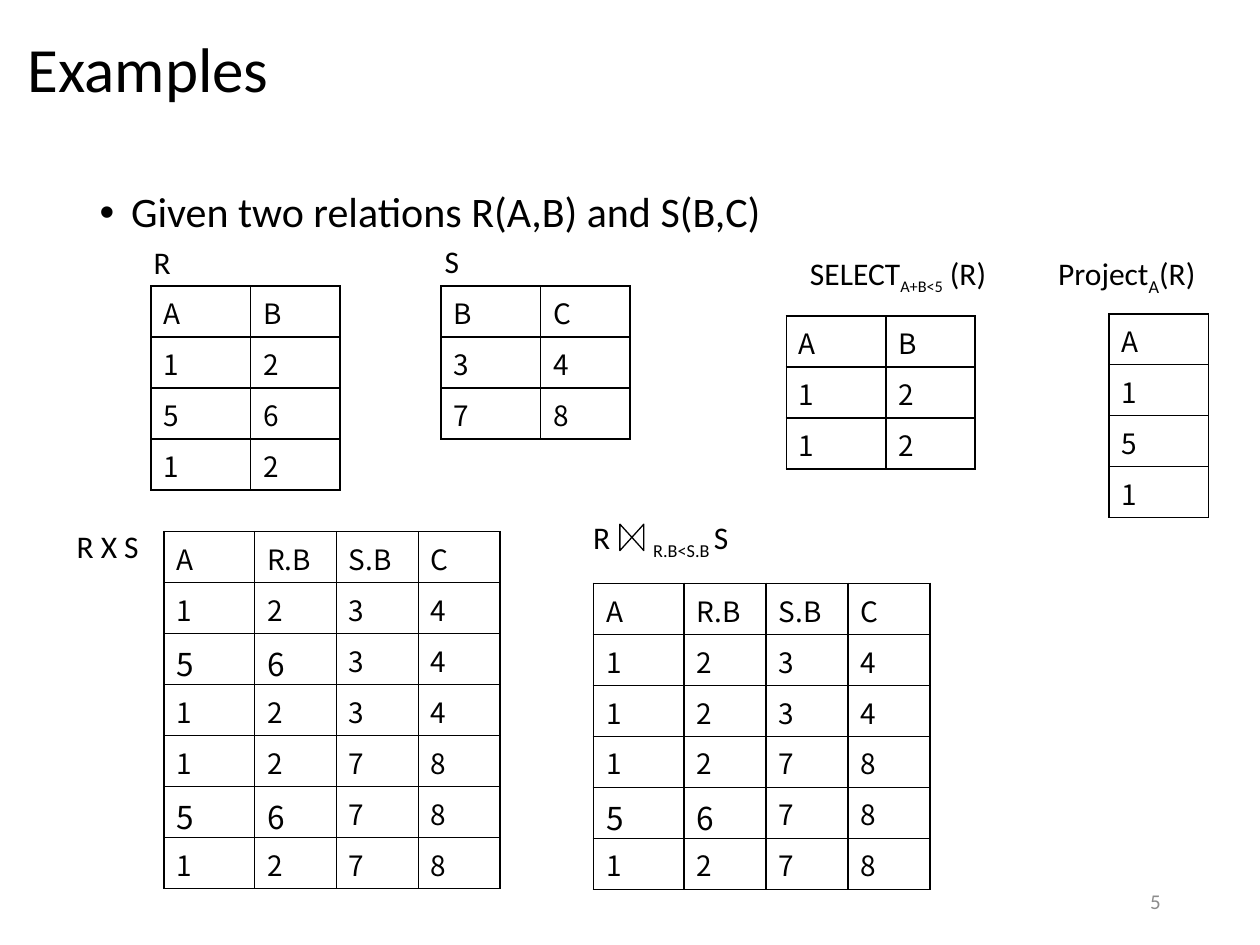
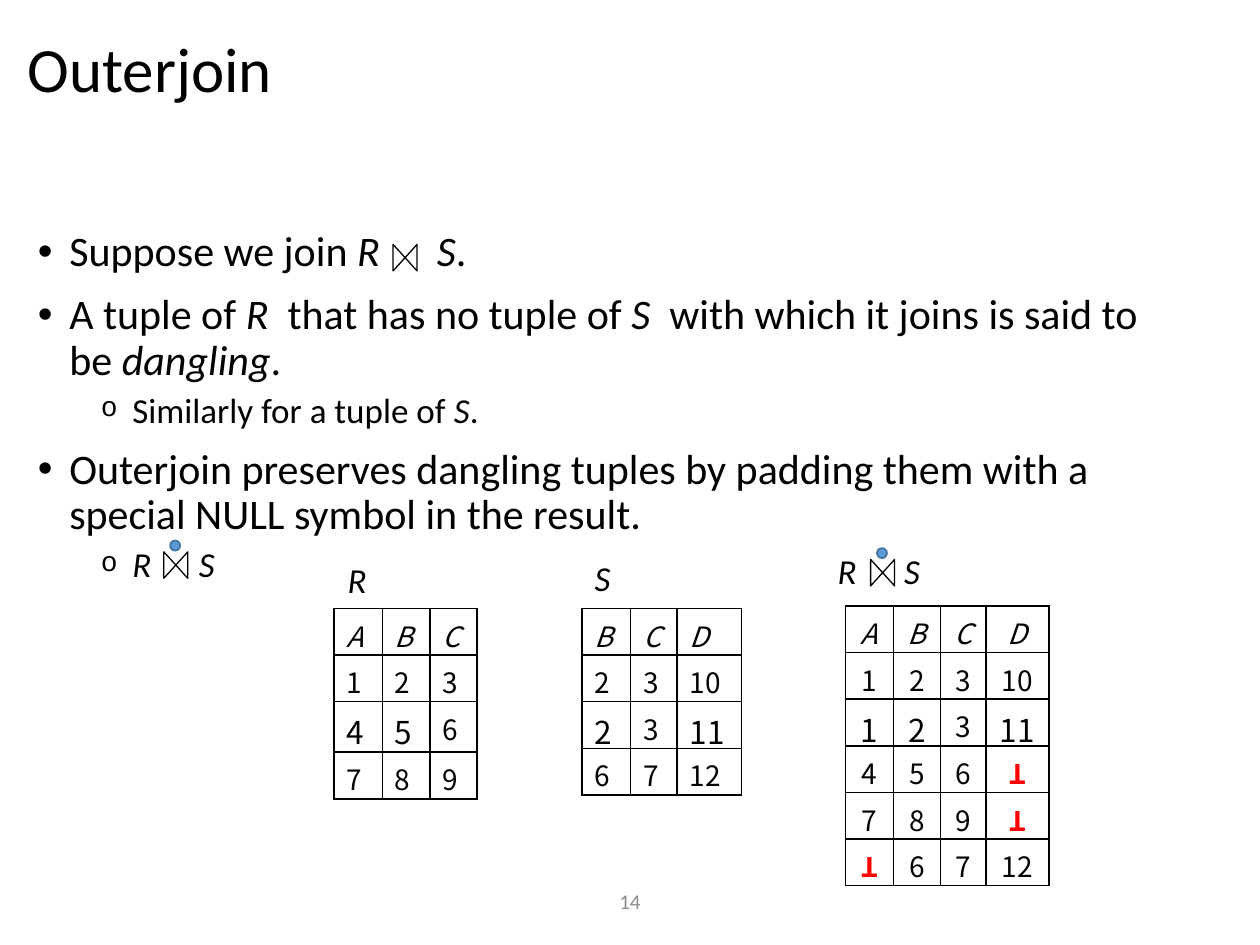
from dataclasses import dataclass

from lxml.etree import SubElement
from pptx import Presentation
from pptx.dml.color import RGBColor
from pptx.enum.shapes import MSO_SHAPE
from pptx.enum.text import MSO_ANCHOR, MSO_AUTO_SIZE, PP_ALIGN
from pptx.oxml.ns import qn
from pptx.util import Emu, Inches, Pt

COLORS = {
    "text": "000000",
    "page_number": "8C8C8C",
    "null": "FF0000",
    "dot": "5B9BD5",
    "dot_edge": "43739E",
}
TEXT_FONT = "Calibri"
TABLE_FONT = "Noto Sans CJK KR"
NULL = "Ʇ"
SPACE_WIDTH = 0.226
GRID_COLUMNS, GRID_ROWS = 100, 75
SLIDE_WIDTH, SLIDE_HEIGHT = Inches(10), Inches(7.5)
BULLETS = [
    {"char": "•", "font": "Arial", "percent": 100, "indent": 0.25, "before": 10, "size": 24},
    {"char": "o", "font": "Courier New", "percent": 80, "indent": 0.75, "before": 5, "size": 20},
]
HANGING = 0.25
ITALIC = {"italic": True}
SUBSCRIPT = {"baseline": -25}
JOIN_GAP = (" ", {"stretch": 5})
WIDE_SPACE = (" ", {"stretch": 1})


@dataclass
class Box:
    """Area measured in columns and rows of the slide grid."""

    left: float
    top: float
    width: float
    height: float

    def emu(self):
        """Return left, top, width and height as slide lengths."""
        column, row = SLIDE_WIDTH / GRID_COLUMNS, SLIDE_HEIGHT / GRID_ROWS
        return [Emu(round(cells * unit)) for cells, unit in
                zip((self.left, self.top, self.width, self.height), (column, row) * 2)]

    def inside(self, across, down, width, height):
        """Return a box placed relative to this one."""
        return Box(self.left + across, self.top + down, width, height)


TITLE_BOX = Box(1.2, 0.8, 97.6, 9.9)


def rgb(name):
    """Look up a colour of the deck."""
    return RGBColor.from_string(COLORS[name])


def write(paragraph, runs, align=PP_ALIGN.LEFT, **shared):
    """Fill a paragraph with strings or (string, format) pairs."""
    paragraph.alignment = align
    for part in [runs] if isinstance(runs, str) else runs:
        words, own = (part, {}) if isinstance(part, str) else part
        look = {"size": 18, "font": TEXT_FONT, "color": "text", **shared, **own}
        run = paragraph.add_run()
        run.text = words
        run.font.size = Pt(look["size"])
        run.font.name = look["font"]
        run.font.color.rgb = rgb(look["color"])
        run.font.bold = look.get("bold", False)
        run.font.italic = look.get("italic", False)
        properties = run.font._element
        if "baseline" in look:
            properties.set("baseline", str(look["baseline"] * 1000))
        if "stretch" in look:
            properties.set("spc", str(round(look["stretch"] * SPACE_WIDTH * look["size"] * 100)))


def place(shape, box):
    """Move a shape to a grid box."""
    shape.left, shape.top, shape.width, shape.height = box.emu()


def add_label(slide, box, runs, anchor=MSO_ANCHOR.TOP, **look):
    """Add a wrapped line of text."""
    frame = slide.shapes.add_textbox(*box.emu()).text_frame
    frame.word_wrap = True
    frame.vertical_anchor = anchor
    write(frame.paragraphs[0], runs, **look)


def add_page_number(slide, box, number, align):
    """Add the grey page number of the footer."""
    add_label(slide, box, number, MSO_ANCHOR.MIDDLE, align=align, size=12, color="page_number")


def set_bullet(paragraph, level):
    """Give a list paragraph its level, spacing, indent and bullet."""
    style = BULLETS[level]
    paragraph.level = level
    paragraph.line_spacing = 0.9
    paragraph.space_before = Pt(style["before"])
    properties = paragraph._p.get_or_add_pPr()
    properties.set("marL", str(Inches(style["indent"])))
    properties.set("indent", str(Inches(-HANGING)))
    SubElement(properties, qn("a:buSzPct")).set("val", str(style["percent"] * 1000))
    SubElement(properties, qn("a:buFont")).set("typeface", style["font"])
    SubElement(properties, qn("a:buChar")).set("char", style["char"])


def start_slide(deck, title, body_box, items):
    """Add a slide with its title and bulleted list."""
    slide = deck.slides.add_slide(deck.slide_layouts[1])
    heading, body = slide.placeholders[0], slide.placeholders[1]
    place(heading, TITLE_BOX)
    place(body, body_box)
    for holder in (heading, body):
        holder.text_frame.word_wrap = True
        holder.text_frame.auto_size = MSO_AUTO_SIZE.NONE
    heading.text_frame.vertical_anchor = MSO_ANCHOR.MIDDLE
    body.text_frame.vertical_anchor = MSO_ANCHOR.TOP
    heading_line = heading.text_frame.paragraphs[0]
    heading_line.line_spacing = 0.9
    write(heading_line, title, size=36)
    for index, (level, runs) in enumerate(items):
        frame = body.text_frame
        paragraph = frame.add_paragraph() if index else frame.paragraphs[0]
        set_bullet(paragraph, level)
        write(paragraph, runs, size=BULLETS[level]["size"])
    return slide


def add_mark(slide, preset, box, edge, weight, fill=None):
    """Add a small outlined preset shape."""
    mark = slide.shapes.add_shape(preset, *box.emu())
    mark.shadow.inherit = False
    mark.line.color.rgb = rgb(edge)
    mark.line.width = Pt(weight)
    if fill:
        mark.fill.solid()
        mark.fill.fore_color.rgb = rgb(fill)
    else:
        mark.fill.background()
    return mark


def add_join_sign(slide, box, outer=False):
    """Draw the bow tie of a join, with a dot above it for an outerjoin."""
    add_mark(slide, MSO_SHAPE.FLOWCHART_COLLATE, box, "text", 0.75).rotation = 90
    if outer:
        add_mark(slide, MSO_SHAPE.OVAL, box.inside(0.6, -1, 0.8, 0.8), "dot_edge", 1, "dot")


def sign_box(left, top):
    """Return the area of a join sign."""
    return Box(left, top, 2.1, 1.9)


def frame_cell(cell):
    """Give a cell four black borders and no fill."""
    properties = cell._tc.get_or_add_tcPr()
    for side in ("a:lnL", "a:lnR", "a:lnT", "a:lnB"):
        border = SubElement(properties, qn(side), w=str(Pt(1)))
        fill = SubElement(border, qn("a:solidFill"))
        SubElement(fill, qn("a:srgbClr")).set("val", COLORS["text"])
    cell.fill.background()


def add_relation(slide, left, top, widths, row_height, rows, large=(),
                 bottom=0, italic_head=False, align=PP_ALIGN.LEFT):
    """Add a relation as a table and return its box."""
    values = [row.split() for row in rows]
    box = Box(left, top, sum(widths), row_height * len(rows))
    table = slide.shapes.add_table(len(rows), len(widths), *box.emu()).table
    table.first_row = table.horz_banding = False
    for column, width in zip(table.columns, widths):
        column.width = Box(0, 0, width, 0).emu()[2]
    for row in table.rows:
        row.height = Box(0, 0, 0, row_height).emu()[3]
    for down, record in enumerate(values):
        for across, value in enumerate(record):
            cell = table.cell(down, across)
            cell.margin_top, cell.margin_bottom = Inches(0.05), Inches(bottom)
            frame_cell(cell)
            missing = value == NULL
            write(cell.text_frame.paragraphs[0], value, align=align, font=TABLE_FONT,
                  size=18 if (down, across) in large else 16,
                  color="null" if missing else "text", bold=missing,
                  italic=italic_head and down == 0)
    return box


def build_examples(deck):
    """Build the slide of relational algebra examples."""
    slide = start_slide(deck, "Examples", Box(6.9, 14.7, 86.2, 7.1),
                        [(0, "Given two relations R(A,B) and S(B,C)")])
    add_page_number(slide, Box(70.6, 69.5, 22.5, 4), "5", PP_ALIGN.RIGHT)
    pair, quad, row_height = (7.9, 7.1), (7.2, 6.5, 6.5, 6.5), 4.05

    r = add_relation(slide, 12, 22.7, pair, row_height, ["A B", "1 2", "5 6", "1 2"], bottom=0.05)
    add_label(slide, r.inside(-0.8, -3.9, 7.9, 4), "R")
    s = add_relation(slide, 35, 22.7, pair, row_height, ["B C", "3 4", "7 8"])
    add_label(slide, s.inside(-0.7, -4, 7.9, 4), "S")
    selection = add_relation(slide, 62.4, 25.1, pair, row_height, ["A B", "1 2", "1 2"])
    add_label(slide, selection.inside(0.9, -5.4, 17.1, 4),
              ["SELECT", ("A+B<5", {"size": 16, **SUBSCRIPT}), " (R)"])
    projection = add_relation(slide, 88, 24.9, pair[:1], row_height, ["A", "1", "5", "1"])
    add_label(slide, projection.inside(-5, -5.2, 15.9, 4),
              ["Project", ("A", SUBSCRIPT), "(R)"])

    product = add_relation(
        slide, 13, 42.2, quad, row_height,
        ["A R.B S.B C", "1 2 3 4", "5 6 3 4", "1 2 3 4", "1 2 7 8", "5 6 7 8", "1 2 7 8"],
        large=[(2, 0), (2, 1), (5, 0), (5, 1)])
    add_label(slide, product.inside(-7.9, -0.9, 11, 4), "R X S")
    join = add_relation(
        slide, 47.1, 46.3, quad, row_height,
        ["A R.B S.B C", "1 2 3 4", "1 2 3 4", "1 2 7 8", "5 6 7 8", "1 2 7 8"],
        large=[(4, 0), (4, 1)])
    add_label(slide, join.inside(-1, -5.7, 14.4, 4),
              ["R", JOIN_GAP, ("R.B<S.B ", SUBSCRIPT), "S"])
    add_join_sign(slide, sign_box(join.left + 2, join.top - 4.6))


def build_outerjoin(deck):
    """Build the slide that explains the outerjoin."""
    r_name, s_name = ("R", ITALIC), ("S", ITALIC)
    r_join_s = [r_name, JOIN_GAP, s_name]
    slide = start_slide(deck, "Outerjoin", Box(2, 17.8, 90.8, 45.8), [
        (0, ["Suppose we join ", *r_join_s, "."]),
        (0, ["A tuple of ", r_name, WIDE_SPACE, "that has no tuple of ", s_name, WIDE_SPACE,
             "with which it joins is said to be ", ("dangling", ITALIC), "."]),
        (1, ["Similarly for a tuple of ", s_name, "."]),
        (0, "Outerjoin preserves dangling tuples by padding them with a "
            "special NULL symbol in the result."),
        (1, r_join_s),
    ])
    add_page_number(slide, Box(33.1, 69.5, 33.8, 4), "14", PP_ALIGN.CENTER)
    add_join_sign(slide, sign_box(31.1, 19.5))
    add_join_sign(slide, sign_box(12.9, 43.9), outer=True)

    r = add_relation(slide, 26.5, 48.3, (3.85, 3.8, 3.7), 3.7,
                     ["A B C", "1 2 3", "4 5 6", "7 8 9"],
                     large=[(2, 0), (2, 1)], bottom=0.05, italic_head=True)
    add_label(slide, r.inside(0.1, -4.5, 7.1, 4.4), [r_name], size=20)
    s = add_relation(slide, 46.2, 48.3, (3.85, 3.7, 5.1), 3.7,
                     ["B C D", "2 3 10", "2 3 11", "6 7 12"],
                     large=[(2, 0), (2, 2)], italic_head=True)
    add_label(slide, s.inside(0, -4.6, 7.1, 4.4), [s_name], size=20)
    outer = add_relation(
        slide, 67.1, 48.1, (3.8, 3.75, 3.6, 5), 3.7,
        ["A B C D", "1 2 3 10", "1 2 3 11", f"4 5 6 {NULL}", f"7 8 9 {NULL}", f"{NULL} 6 7 12"],
        large=[(2, 0), (2, 1), (2, 3)], italic_head=True, align=PP_ALIGN.CENTER)
    add_label(slide, outer.inside(-1.6, -5, 10.9, 4.4), r_join_s, size=20)
    add_join_sign(slide, sign_box(outer.left + 1.9, outer.top - 3.6), outer=True)


def main():
    """Build and save the deck."""
    deck = Presentation()
    deck.slide_width, deck.slide_height = SLIDE_WIDTH, SLIDE_HEIGHT
    build_examples(deck)
    build_outerjoin(deck)
    deck.save("out.pptx")


if __name__ == "__main__":
    main()
